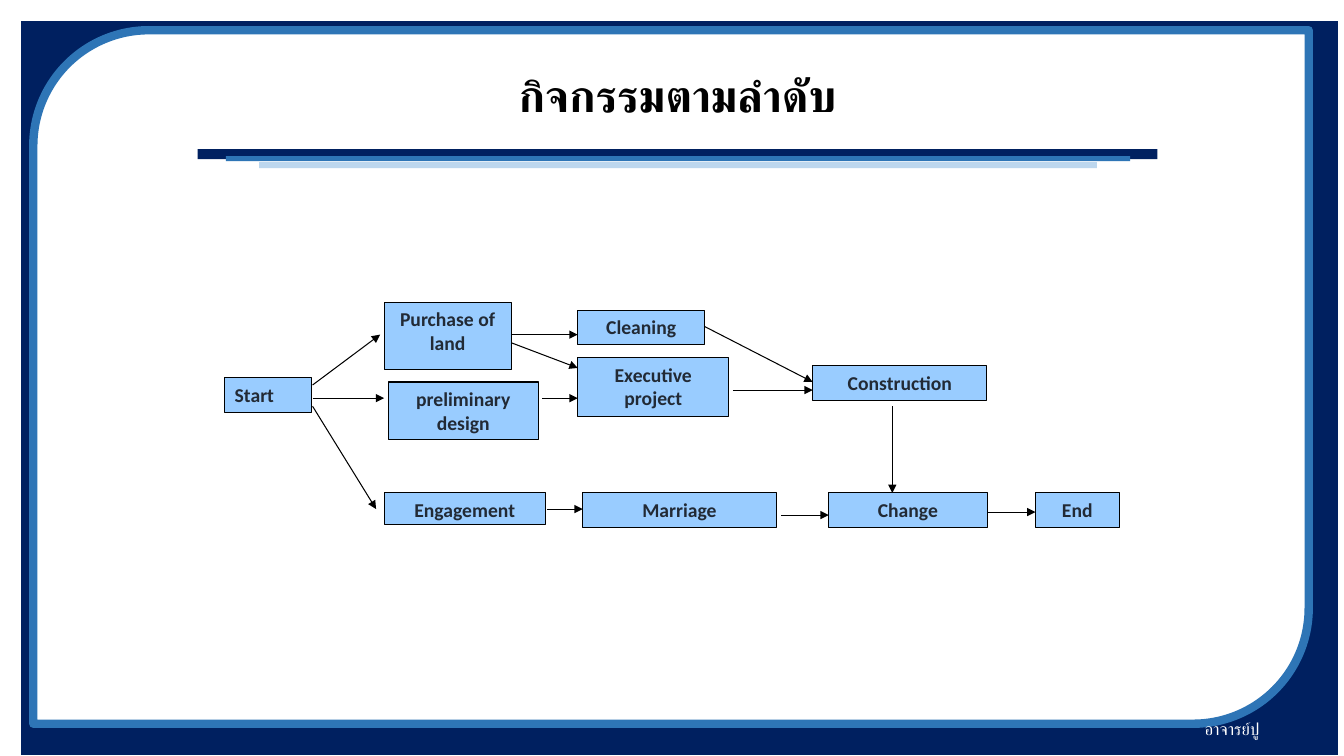
import pptx
import pptx.dml.color
import pptx.enum.shapes
import pptx.enum.text
import pptx.oxml.ns
import pptx.util
from lxml import etree

RGBColor = pptx.dml.color.RGBColor
SHAPE = pptx.enum.shapes.MSO_SHAPE
ALIGN = pptx.enum.text.PP_ALIGN
ANCHOR = pptx.enum.text.MSO_ANCHOR

NAVY = RGBColor(0x00, 0x20, 0x60)
BLUE = RGBColor(0x2E, 0x75, 0xB6)
PALE_BLUE = RGBColor(0xBD, 0xD7, 0xEE)
SKY = RGBColor(0x99, 0xCC, 0xFF)
SLATE = RGBColor(0x22, 0x2A, 0x35)
WHITE = RGBColor(0xFF, 0xFF, 0xFF)
BLACK = RGBColor(0x00, 0x00, 0x00)

# The page is a grid of 1333 columns by 750 rows.
CELL = pptx.util.Inches(0.01)
COLUMNS, ROWS = 1333, 750

deck = pptx.Presentation()
deck.slide_width = COLUMNS * CELL
deck.slide_height = ROWS * CELL
page = deck.slides.add_slide(deck.slide_layouts[5])


def add_panel(kind, area, fill, line=None, weight=0.75):
    """Add a filled shape; area is left, top, width and height in cells."""
    panel = page.shapes.add_shape(kind, *(length * CELL for length in area))
    panel.shadow.inherit = False
    panel.fill.solid()
    panel.fill.fore_color.rgb = fill
    if line is None:
        panel.line.fill.background()
    else:
        panel.line.color.rgb = line
        panel.line.width = pptx.util.Pt(weight)
    return panel


def write(frame, text, size, font, color, bold=False, align=ALIGN.CENTER):
    frame.word_wrap = True
    para = frame.paragraphs[0]
    para.alignment = align
    span = para.add_run()
    span.text = text
    span.font.size = pptx.util.Pt(size)
    span.font.name = font
    span.font.bold = bold
    span.font.color.rgb = color


# Frame and the three rules under the title
add_panel(SHAPE.RECTANGLE, (21, 21, 1306, 728), NAVY)
add_panel(SHAPE.ROUND_2_DIAG_RECTANGLE, (33, 30, 1265, 688), WHITE, BLUE, 6)
for area, color in [
    ((196, 148, 952, 10), NAVY),
    ((224, 155, 897, 5), BLUE),
    ((257, 161, 831, 6), PALE_BLUE),
]:
    add_panel(SHAPE.RECTANGLE, area, color)

author = page.shapes.add_textbox(1185 * CELL, 708 * CELL, 127 * CELL, 30 * CELL)
write(author.text_frame, "อาจารย์ปู", 12, "Calibri", WHITE, align=ALIGN.LEFT)

# Title, brought in front of the frame
title = page.shapes.title
title.left, title.top = 196 * CELL, 49 * CELL
title.width, title.height = 952 * CELL, 97 * CELL
title.text_frame.vertical_anchor = ANCHOR.MIDDLE
write(title.text_frame, "กิจกรรมตามลำดับ", 32, "Arial", BLACK, bold=True)
title.text_frame.paragraphs[0].line_spacing = 0.9
page.shapes._spTree.append(title._element)

# Activities
LINE_HEIGHT = 34
LAST_ROW = 489
activities = [
    ("Start", (223, 375, 86, LINE_HEIGHT)),
    ("Purchase of land", (381, 300, 126, 67)),
    ("preliminary design", (385, 379, 149, 57)),
    ("Cleaning", (573, 308, 126, LINE_HEIGHT)),
    ("Executive project", (573, 355, 150, 58)),
    ("Construction", (806, 363, 173, LINE_HEIGHT)),
    ("Engagement", (381, LAST_ROW, 160, 31)),
    ("Marriage", (578, LAST_ROW, 192, LINE_HEIGHT)),
    ("Change", (822, LAST_ROW, 157, LINE_HEIGHT)),
    ("End", (1027, LAST_ROW, 83, LINE_HEIGHT)),
]
for label, area in activities:
    activity = add_panel(SHAPE.RECTANGLE, area, SKY, BLACK)
    activity.text_frame.vertical_anchor = ANCHOR.TOP
    align = ALIGN.LEFT if label == "Start" else ALIGN.CENTER
    write(activity.text_frame, label, 14, "Calibri", SLATE, True, align)

# Arrows between activities: start column, start row, end column, end row
arrows = [
    (310, 382, 377, 332),
    (310, 395, 381, 395),
    (310, 403, 373, 505),
    (507, 332, 573, 332),
    (507, 340, 573, 365),
    (538, 395, 573, 395),
    (699, 324, 806, 379),
    (727, 387, 806, 387),
    (885, 403, 885, LAST_ROW),
    (543, 505, 578, 505),
    (775, 511, 822, 511),
    (979, 508, 1027, 508),
]
for ends in arrows:
    arrow = page.shapes.add_connector(
        pptx.enum.shapes.MSO_CONNECTOR.STRAIGHT, *(end * CELL for end in ends)
    )
    arrow.line.color.rgb = BLACK
    arrow.line.width = pptx.util.Pt(0.75)
    head = etree.SubElement(arrow.line._get_or_add_ln(), pptx.oxml.ns.qn("a:tailEnd"))
    head.set("type", "triangle")
    etree.SubElement(arrow._element.spPr, pptx.oxml.ns.qn("a:effectLst"))

deck.save("out.pptx")
